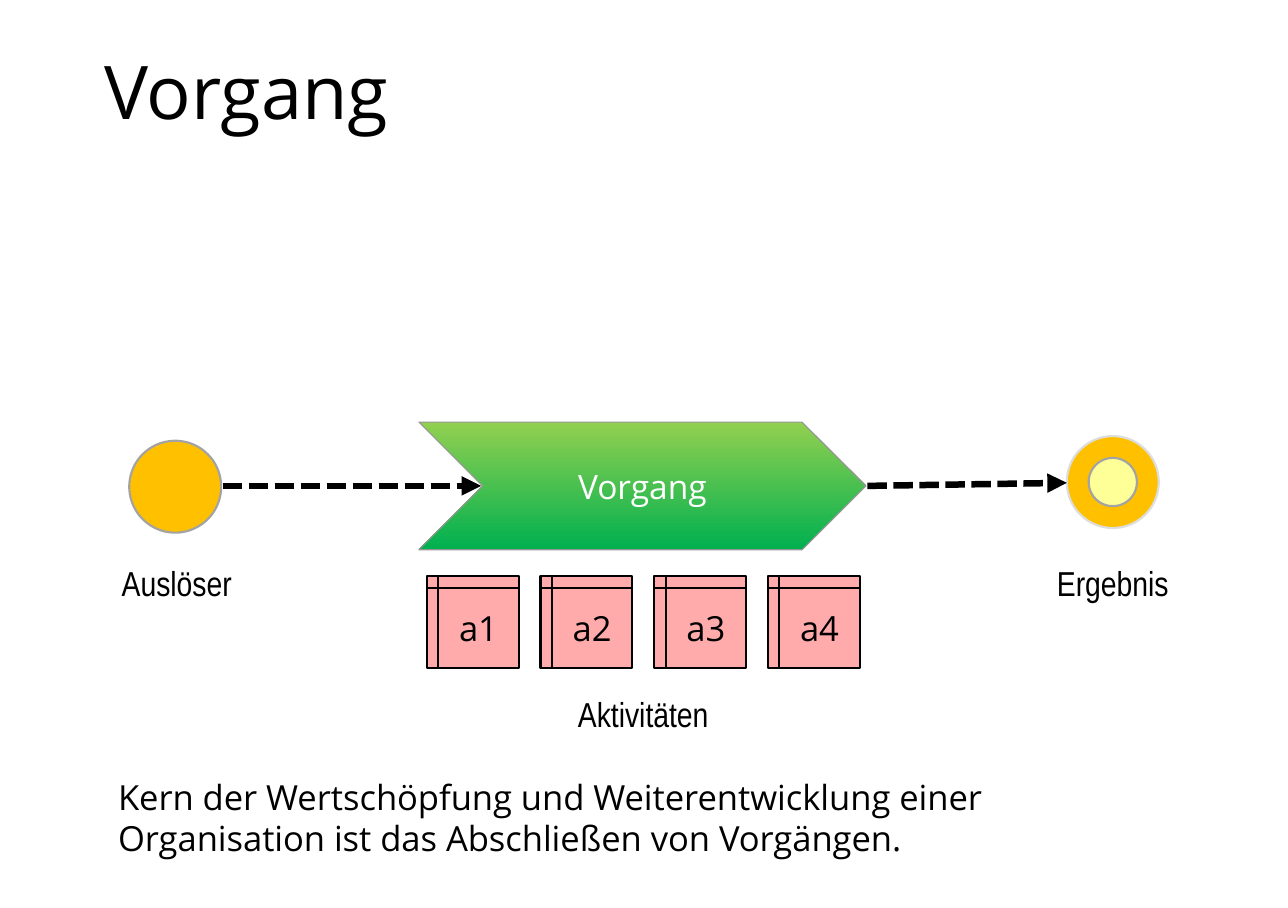
from lxml import etree
from pptx import Presentation
from pptx.dml.color import RGBColor
from pptx.enum.dml import MSO_LINE
from pptx.enum.shapes import MSO_CONNECTOR, MSO_SHAPE
from pptx.enum.text import MSO_ANCHOR, MSO_AUTO_SIZE, PP_ALIGN
from pptx.oxml.ns import qn
from pptx.util import Inches, Pt

CHEVRON = MSO_SHAPE.CHEVRON
CIRCLE = MSO_SHAPE.OVAL
STORAGE = MSO_SHAPE.FLOWCHART_INTERNAL_STORAGE
STRAIGHT = MSO_CONNECTOR.STRAIGHT
DASH = MSO_LINE.SQUARE_DOT
CENTER, LEFT = PP_ALIGN.CENTER, PP_ALIGN.LEFT
MIDDLE = MSO_ANCHOR.MIDDLE
GROW = MSO_AUTO_SIZE.SHAPE_TO_FIT_TEXT

SANS, NARROW = "Open Sans", "Arial Narrow"
BLACK, WHITE, GREY = "000000", "FFFFFF", "A3A3A3"
ORANGE, YELLOW, PINK = "FFC000", "FFFF97", "FFABAB"
NODE = 0.59  # side of the circles and activity boxes


def color(value):
    return RGBColor.from_string(value)


def write(tf, text, size=16, font=SANS, fill=BLACK, align=LEFT):
    tf.text = text
    p = tf.paragraphs[0]
    p.alignment = align
    r = p.runs[0]
    r.font.size = Pt(size)
    r.font.name = font
    r.font.color.rgb = color(fill)
    return p


def add_shape(slide, kind, x, y, w, h, line, fill=None, width=1):
    s = slide.shapes.add_shape(kind, Inches(x), Inches(y), Inches(w), Inches(h))
    s.shadow.inherit = False
    if fill:
        s.fill.solid()
        s.fill.fore_color.rgb = color(fill)
    s.line.color.rgb = color(line)
    s.line.width = Pt(width)
    return s


def add_circle(slide, x, y, size, fill, line):
    add_shape(slide, CIRCLE, x, y, size, size, line, fill)


def add_process(slide, text):
    s = add_shape(slide, CHEVRON, 2.69, 2.71, 2.87, 0.82, "969696", width=0.5)
    s.fill.gradient()
    s.fill.gradient_angle = 270
    for stop, value in zip(s.fill.gradient_stops, ("92D050", "00B050")):
        stop.color.rgb = color(value)
    s.text_frame.vertical_anchor = MIDDLE
    write(s.text_frame, text, 15.5, fill=WHITE, align=CENTER)


def add_activity(slide, x, text):
    s = add_shape(slide, STORAGE, x, 3.7, NODE, NODE, BLACK, PINK)
    tf = s.text_frame
    tf.margin_left = tf.margin_right = Inches(0.04)
    tf.margin_top = tf.margin_bottom = Inches(0.04)
    tf.vertical_anchor = MIDDLE
    write(tf, text, align=CENTER)


def add_arrow(slide, x1, y1, x2, y2):
    c = slide.shapes.add_connector(
        STRAIGHT, Inches(x1), Inches(y1), Inches(x2), Inches(y2))
    c.line.color.rgb = color(BLACK)
    c.line.width = Pt(3)
    c.line.dash_style = DASH
    etree.SubElement(c.line._get_or_add_ln(), qn("a:tailEnd"), type="triangle")
    etree.SubElement(c._element.spPr, qn("a:effectLst"))


def add_text(slide, x, y, w, h, text, wrap=True, grow=True, **style):
    tf = slide.shapes.add_textbox(
        Inches(x), Inches(y), Inches(w), Inches(h)).text_frame
    tf.word_wrap = wrap
    if grow:
        tf.auto_size = GROW
    return write(tf, text, **style)


def add_label(slide, x, y, w, text):
    add_text(slide, x, y, w, 0.37, text, wrap=False, font=NARROW, align=CENTER)


def main():
    prs = Presentation()
    prs.slide_width, prs.slide_height = Inches(8.27), Inches(5.83)
    slide = prs.slides.add_slide(prs.slide_layouts[6])

    title = add_text(slide, 0.57, 0.31, 7.13, 1.13, "Vorgang", grow=False, size=34.2)
    title.line_spacing = 0.9

    add_process(slide, "Vorgang")
    add_circle(slide, 0.83, 2.83, NODE, ORANGE, GREY)
    add_circle(slide, 6.85, 2.8, NODE, ORANGE, "DDDDDD")
    add_circle(slide, 6.99, 2.94, 0.31, YELLOW, GREY)
    add_arrow(slide, 1.43, 3.12, 3.09, 3.12)
    add_arrow(slide, 5.57, 3.12, 6.85, 3.1)

    for i in range(4):
        add_activity(slide, 2.74 + 0.73 * i, f"a{i + 1}")

    add_label(slide, 0.66, 3.56, 0.95, "Auslöser")
    add_label(slide, 6.67, 3.56, 0.95, "Ergebnis")
    add_label(slide, 3.54, 4.4, 1.18, "Aktivitäten")
    add_text(slide, 0.66, 4.93, 7.11, 0.64,
             "Kern der Wertschöpfung und Weiterentwicklung einer "
             "Organisation ist das Abschließen von Vorgängen.")

    prs.save("out.pptx")


if __name__ == "__main__":
    main()
